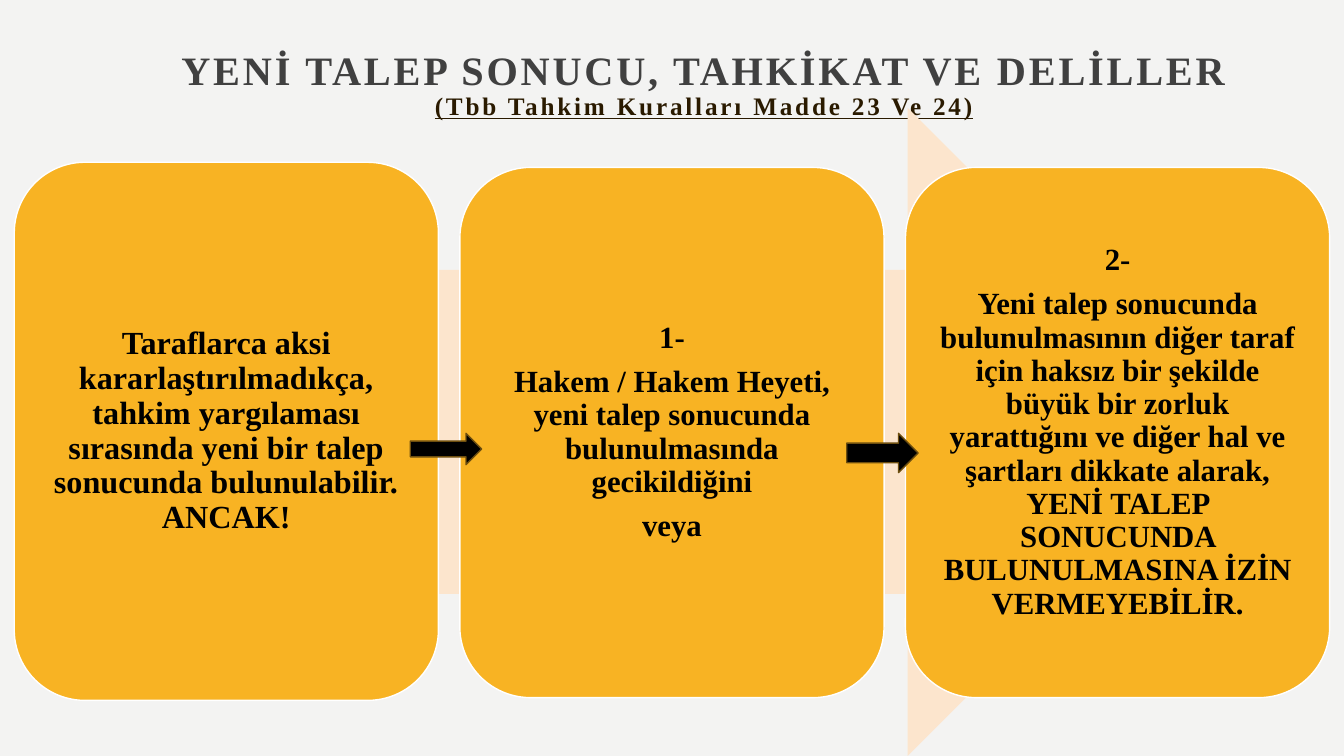
from pptx import Presentation
from pptx.dml.color import RGBColor
from pptx.enum.shapes import MSO_SHAPE
from pptx.enum.text import MSO_ANCHOR, PP_ALIGN
from pptx.util import Cm, Pt

ARROW = MSO_SHAPE.RIGHT_ARROW
ROUND = MSO_SHAPE.ROUNDED_RECTANGLE
CENTER = PP_ALIGN.CENTER
MIDDLE = MSO_ANCHOR.MIDDLE

COLORS = {
    "back": "F3F3F2", "title": "404040", "rule": "2A1A00", "band": "FCE5CD",
    "card": "F8B323", "edge": "FFFFFF", "ink": "000000", "rim": "6D4E0F",
}

HEADS = [
    ("YENİ TALEP SONUCU, TAHKİKAT VE DELİLLER", 28.8, "title", False),
    ("(Tbb Tahkim Kuralları Madde 23 Ve 24)", 18, "rule", True),
]

# Top, height, text size and paragraphs of each card
CARDS = [
    (4.09, 13.56, 23, [
        "Taraflarca aksi kararlaştırılmadıkça, tahkim yargılaması sırasında "
        "yeni bir talep sonucunda bulunulabilir. ANCAK!"]),
    (4.22, 13.36, 22, [
        "1-",
        "Hakem / Hakem Heyeti, yeni talep sonucunda bulunulmasında "
        "gecikildiğini",
        "veya"]),
    (4.22, 13.36, 22, [
        "2-",
        "Yeni talep sonucunda bulunulmasının diğer taraf için haksız bir "
        "şekilde büyük bir zorluk yarattığını ve diğer hal ve şartları "
        "dikkate alarak, YENİ TALEP SONUCUNDA BULUNULMASINA İZİN "
        "VERMEYEBİLİR."]),
]
LEFT, WIDTH, PITCH = 0.36, 10.69, 11.23

# Left and height of each small arrow
STEPS = [(10.34, 0.79), (21.34, 0.99)]


def rgb(name):
    return RGBColor.from_string(COLORS[name])


def apply(item, values):
    for key, value in values.items():
        setattr(item, key, value)


def add_form(slide, kind, box, fill, line=None):
    """Add a filled preset shape; box is left, top, width, height in cm."""
    form = slide.shapes.add_shape(kind, *map(Cm, box))
    form.shadow.inherit = False
    form.fill.solid()
    form.fill.fore_color.rgb = rgb(fill)
    if line:
        form.line.color.rgb = rgb(line)
        form.line.width = Pt(1)
    else:
        form.line.fill.background()
    return form


def add_para(frame, first, text, size, color, after=0, under=False):
    para = frame.paragraphs[0] if first else frame.add_paragraph()
    apply(para, {"alignment": CENTER, "line_spacing": 0.9,
                 "space_before": Pt(0), "space_after": Pt(after)})
    run = para.add_run()
    run.text = text
    apply(run.font, {"name": "Times New Roman", "size": Pt(size),
                     "bold": True, "underline": under})
    run.font.color.rgb = rgb(color)
    return run


def add_title(slide):
    box = slide.shapes.add_textbox(Cm(3.73), Cm(1.14), Cm(28.02), Cm(2.39))
    frame = box.text_frame
    frame.word_wrap = True
    for i, (text, size, color, under) in enumerate(HEADS):
        run = add_para(frame, i == 0, text, size, color, under=under)
        run._r.get_or_add_rPr().set("spc", "200")


def add_card(slide, left, top, height, size, texts):
    card = add_form(slide, ROUND, (left, top, WIDTH, height), "card", "edge")
    frame = card.text_frame
    pad = Cm(0.24)
    apply(frame, {"word_wrap": True, "vertical_anchor": MIDDLE,
                  "margin_left": pad, "margin_right": pad,
                  "margin_top": pad, "margin_bottom": pad})
    for i, text in enumerate(texts):
        add_para(frame, i == 0, text, size, "ink", after=0.35 * size)


def main():
    deck = Presentation()
    deck.slide_width, deck.slide_height = Cm(33.87), Cm(19.05)
    slide = deck.slides.add_slide(deck.slide_layouts[6])
    slide.background.fill.solid()
    slide.background.fill.fore_color.rgb = rgb("back")

    add_title(slide)
    add_form(slide, ARROW, (2.82, 2.72, 28.22, 16.33), "band")
    for i, card in enumerate(CARDS):
        add_card(slide, LEFT + i * PITCH, *card)
    for left, height in STEPS:
        add_form(slide, ARROW, (left, 10.92, 1.8, height), "ink", "rim")
    deck.save("out.pptx")


if __name__ == "__main__":
    main()
